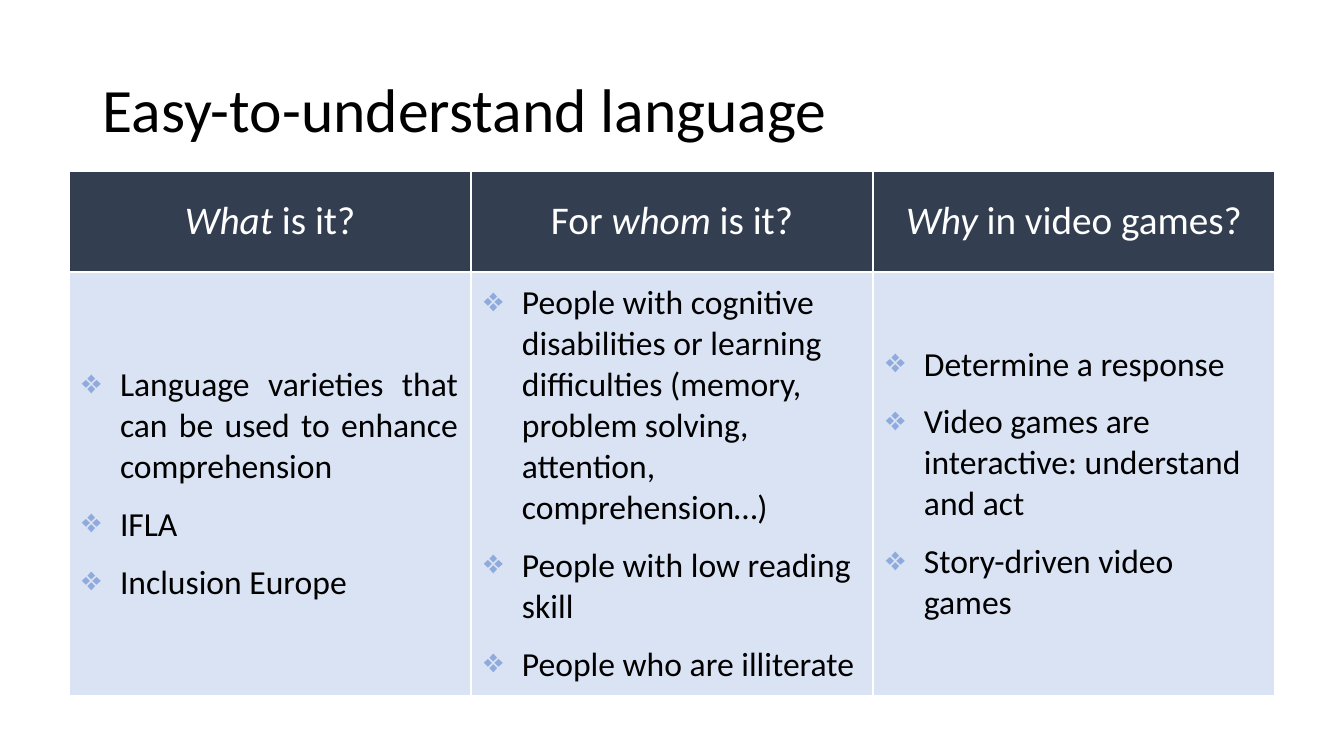
from pptx import Presentation
from pptx.dml.color import RGBColor as RGB
from pptx.enum.text import MSO_ANCHOR as ANCHOR, PP_ALIGN as ALIGN
from pptx.util import Emu, Pt
from lxml.etree import SubElement as Sub
from pptx.oxml import parse_xml
from pptx.oxml.ns import nsdecls, qn

SCALE = 914400 / 100.8  # EMU in one px
COLORS = {"ink": "000000", "white": "FFFFFF", "head": "333F50",
          "body": "DAE3F3", "mark": "8FAADC"}


def px(n):
    return Emu(round(n * SCALE))


def write(par, text, size=24, color="ink", align=ALIGN.LEFT, bullet=None):
    """Fill a paragraph; parts between asterisks are italic."""
    par.alignment = align
    for i, part in enumerate(text.split("*")):
        if part:
            run = par.add_run()
            run.text = part
            font = run.font
            font.name, font.size, font.bold = "Calibri", Pt(size), False
            font.italic = i % 2 == 1
            font.color.rgb = RGB.from_string(COLORS[color])
    if bullet:
        par.space_after = Pt(12)
        props = par._p.get_or_add_pPr()
        props.set("marL", str(px(38)))
        props.set("indent", str(px(-38)))
        tint = Sub(props, qn("a:buClr"))
        Sub(tint, qn("a:srgbClr"), val=COLORS["mark"])
        Sub(props, qn("a:buChar"), char=bullet)


deck = Presentation()
deck.slide_width, deck.slide_height = px(1344), px(756)
slide = deck.slides.add_slide(deck.slide_layouts[6])

# Title
frame = slide.shapes.add_textbox(px(93), px(40), px(1159), px(146)).text_frame
frame.word_wrap = True
frame.vertical_anchor = ANCHOR.MIDDLE
title = frame.paragraphs[0]
title.line_spacing = 0.9
write(title, "Easy-to-understand language", size=44)

# Columns: heading, alignment of the list, list items
COLS = [
    ("*What *is it?", ALIGN.JUSTIFY, [
        "Language varieties that can be used to enhance comprehension",
        "IFLA",
        "Inclusion Europe"]),
    ("For *whom *is it?", ALIGN.LEFT, [
        "People with cognitive disabilities or learning difficulties "
        "(memory, problem solving, attention, comprehension…)",
        "People with low reading skill",
        "People who are illiterate"]),
    ("*Why* in video games?", ALIGN.LEFT, [
        "Determine a response",
        "Video games are interactive: understand and act",
        "Story-driven video games"]),
]

# Table
table = slide.shapes.add_table(2, 3, px(69), px(171), px(1206), px(525)).table
table.rows[0].height, table.rows[1].height = px(101), px(424)
for c, (head, align, items) in enumerate(COLS):
    table.columns[c].width = px(402)
    top, low = table.cell(0, c), table.cell(1, c)
    write(top.text_frame.paragraphs[0], head, size=28, color="white",
          align=ALIGN.CENTER)
    for i, item in enumerate(items):
        text = low.text_frame
        par = text.add_paragraph() if i else text.paragraphs[0]
        write(par, item, align=align, bullet="❖")

    # Fill, margins and white borders
    for cell, fill in ((top, "head"), (low, "body")):
        cell.vertical_anchor = ANCHOR.MIDDLE
        cell.margin_left = cell.margin_right = px(13)
        cell.margin_top = cell.margin_bottom = px(5)
        cell.fill.solid()
        cell.fill.fore_color.rgb = RGB.from_string(COLORS[fill])
        props = cell._tc.get_or_add_tcPr()
        for i, side in enumerate("LRTB"):
            props.insert(i, parse_xml(
                f'<a:ln{side} {nsdecls("a")} w="{Pt(1)}"><a:solidFill>'
                f'<a:srgbClr val="{COLORS["white"]}"/></a:solidFill>'
                f'</a:ln{side}>'))

deck.save("out.pptx")
